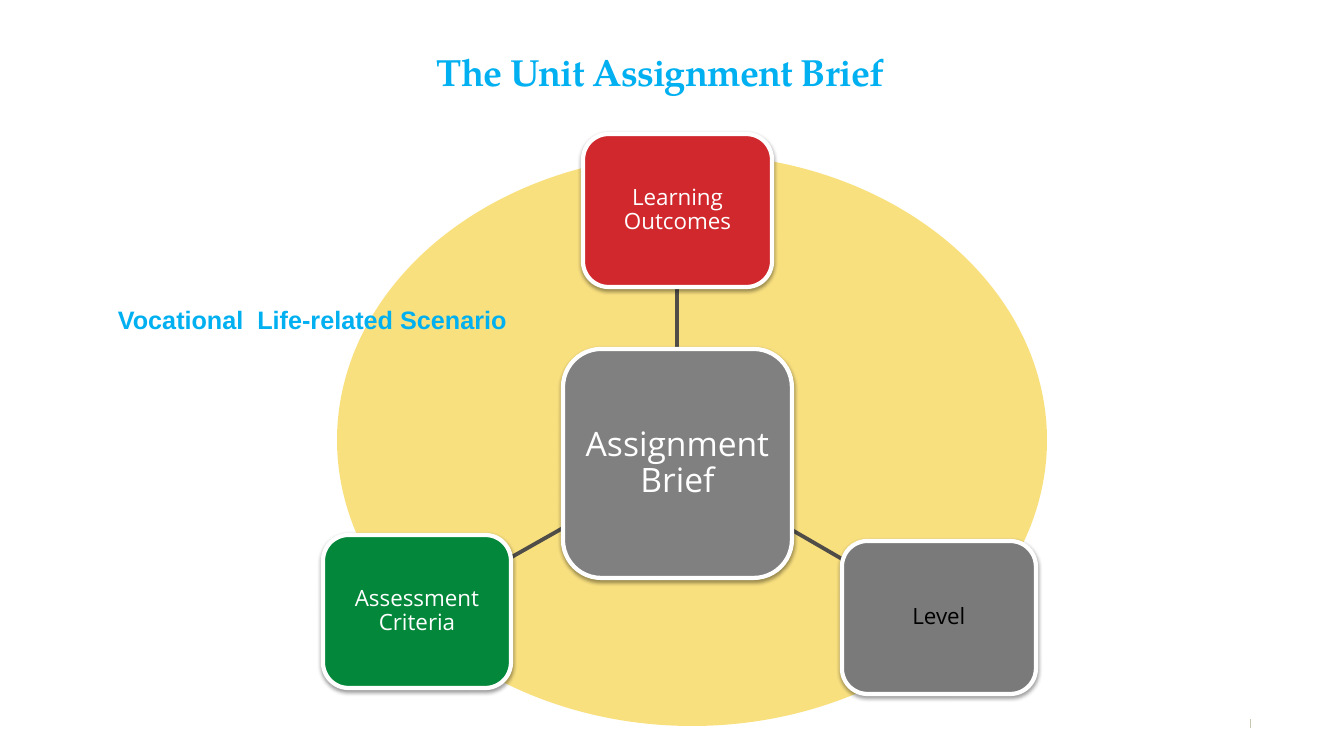
from lxml import etree
from pptx import Presentation
from pptx.dml.color import RGBColor
from pptx.enum.shapes import MSO_CONNECTOR, MSO_SHAPE
from pptx.enum.text import MSO_ANCHOR, MSO_AUTO_SIZE, PP_ALIGN
from pptx.oxml import parse_xml
from pptx.oxml.ns import qn
from pptx.util import Pt

WHITE = RGBColor(0xFF, 0xFF, 0xFF)
BLACK = RGBColor(0, 0, 0)
BLUE = RGBColor(0x00, 0xB0, 0xF0)
YELLOW = RGBColor(0xF5, 0xC2, 0x01)
RED = RGBColor(0xD1, 0x28, 0x2E)
GREEN = RGBColor(0x03, 0x87, 0x3A)
GRAY = RGBColor(0x80, 0x80, 0x80)
DARK_GRAY = RGBColor(0x7A, 0x7A, 0x7A)
SPOKE = RGBColor(0x50, 0x4D, 0x49)
BEIGE = RGBColor(0xC8, 0xC8, 0xB1)

TITLE = "The Unit Assignment Brief"
SCENARIO = "Vocational  Life-related Scenario"
CARDS = [
    ("Assignment Brief", (563, 349, 229, 229), GRAY, WHITE, 24),
    ("Learning Outcomes", (583, 134, 189, 153), RED, WHITE, 16),
    ("Level", (842, 541, 194, 153), DARK_GRAY, BLACK, 16),
    ("Assessment Criteria", (323, 535, 188, 153), GREEN, WHITE, 16),
]
LINES = [
    ((1250, 719, 1250, 728), BEIGE, 0.5),
    ((677, 349, 677, 287), SPOKE, 2.75),
    ((792, 530, 842, 559), SPOKE, 2.75),
    ((563, 528, 510, 558), SPOKE, 2.75),
]
SHADOW = (
    '<a:effectLst xmlns:a="http://schemas.openxmlformats.org/drawingml/2006/main">'
    '<a:outerShdw blurRad="39370" dist="20320" dir="5400000" rotWithShape="0">'
    '<a:srgbClr val="000000"><a:alpha val="38000"/></a:srgbClr>'
    '</a:outerShdw></a:effectLst>'
)


def px(*values):
    return [round(v * 914400 / 100.8) for v in values]


def add_run(p, text, font, size, color, bold=False):
    r = p.add_run()
    r.text = text
    r.font.name = font
    r.font.size = Pt(size)
    r.font.bold = bold
    r.font.color.rgb = color
    return r


def set_margins(tf, left, other):
    tf.margin_left, tf.margin_right, tf.margin_top, tf.margin_bottom = px(left, other, other, other)


def add_line(s, ends, color, width):
    line = s.shapes.add_connector(MSO_CONNECTOR.STRAIGHT, *px(*ends))
    line.line.color.rgb = color
    line.line.width = Pt(width)
    etree.SubElement(line._element.spPr, qn("a:effectLst"))


def add_card(s, text, box, fill, color, size):
    sp = s.shapes.add_shape(MSO_SHAPE.ROUNDED_RECTANGLE, *px(*box))
    sp.fill.solid()
    sp.fill.fore_color.rgb = fill
    sp.line.color.rgb = WHITE
    sp.line.width = Pt(3)
    sp._element.spPr.append(parse_xml(SHADOW))
    tf = sp.text_frame
    tf.word_wrap = True
    tf.vertical_anchor = MSO_ANCHOR.MIDDLE
    set_margins(tf, 4, 4)
    p = tf.paragraphs[0]
    p.alignment = PP_ALIGN.CENTER
    p.line_spacing = 0.9
    add_run(p, text, "Open Sans", size, color)


def add_ellipse(s):
    sp = s.shapes.add_shape(MSO_SHAPE.OVAL, *px(337, 154, 710, 572))
    sp.shadow.inherit = False
    sp.fill.solid()
    sp.fill.fore_color.rgb = YELLOW
    sp.line.fill.background()
    clr = sp._element.spPr.find(qn("a:solidFill"))[0]
    etree.SubElement(clr, qn("a:alpha"), val="50000")


def add_scenario(s):
    tf = s.shapes.add_textbox(*px(118, 304, 392, 30)).text_frame
    tf.word_wrap = False
    set_margins(tf, 0, 0)
    add_run(tf.paragraphs[0], SCENARIO, "Arial", 18, BLUE, True)


def set_title(s):
    sp = s.shapes.title
    sp.left, sp.top, sp.width, sp.height = px(340, 31, 634, 94)
    tf = sp.text_frame
    tf.auto_size = MSO_AUTO_SIZE.NONE
    tf.vertical_anchor = MSO_ANCHOR.TOP
    set_margins(tf, 97, 10)
    p = tf.paragraphs[0]
    p.alignment = PP_ALIGN.LEFT
    p.line_spacing = 1.18
    r = add_run(p, TITLE, "TeX Gyre Pagella", 27, BLUE, True)
    r._r.get_or_add_rPr().set("spc", "-60")


def main():
    prs = Presentation()
    prs.slide_width, prs.slide_height = px(1344, 756)
    s = prs.slides.add_slide(prs.slide_layouts[5])
    set_title(s)
    add_ellipse(s)
    add_scenario(s)
    for line in LINES:
        add_line(s, *line)
    for card in CARDS:
        add_card(s, *card)
    prs.save("out.pptx")


if __name__ == "__main__":
    main()
